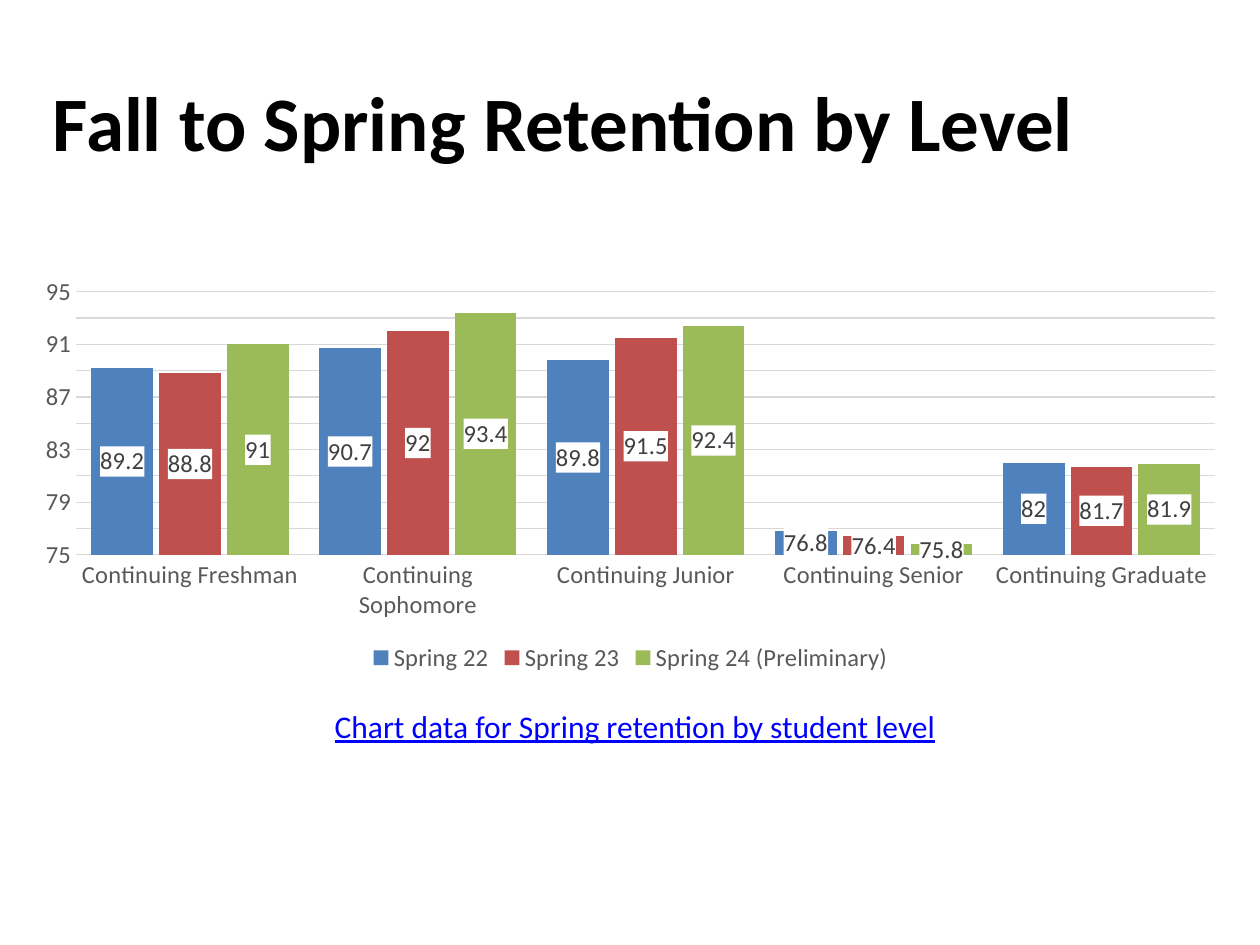
from lxml.etree import SubElement
from pptx import Presentation
from pptx.chart.data import CategoryChartData
from pptx.dml.color import RGBColor
from pptx.enum.chart import XL_CHART_TYPE, XL_LABEL_POSITION, XL_LEGEND_POSITION, XL_TICK_MARK
from pptx.enum.text import MSO_ANCHOR, PP_ALIGN
from pptx.oxml.ns import qn
from pptx.util import Inches, Pt

TITLE = "Fall to Spring Retention by Level"
DATA_CAPTION = "Chart data for Spring retention by student level"
LEVELS = ["Continuing Freshman", "Continuing Sophomore", "Continuing Junior",
          "Continuing Senior", "Continuing Graduate"]

BLACK = RGBColor(0, 0, 0)
LINK_BLUE = RGBColor(0, 0, 0xFF)
AXIS_GRAY = RGBColor(0x59, 0x59, 0x59)
LABEL_GRAY = RGBColor(0x40, 0x40, 0x40)
GRID_GRAY = RGBColor(0xD9, 0xD9, 0xD9)
WHITE = RGBColor(0xFF, 0xFF, 0xFF)
FONT = "Calibri"

TERMS = [
    ("Spring 22", (89.2, 90.7, 89.8, 76.8, 82), RGBColor(0x4F, 0x81, 0xBD)),
    ("Spring 23", (88.8, 92, 91.5, 76.4, 81.7), RGBColor(0xC0, 0x50, 0x4D)),
    ("Spring 24 (Preliminary)", (91, 93.4, 92.4, 75.8, 81.9), RGBColor(0x9B, 0xBB, 0x59)),
]


def style_font(font, size, color, bold=False, underline=False):
    font.name, font.size, font.bold = FONT, Pt(size), bold
    font.underline = underline
    font.color.rgb = color


def style_line(line, color):
    line.color.rgb = color
    line.width = Pt(0.75)


def add_text(slide, text, box, align=PP_ALIGN.LEFT, anchor=MSO_ANCHOR.TOP,
             side_inset=0.1, **font_format):
    frame = slide.shapes.add_textbox(*map(Inches, box)).text_frame
    frame.word_wrap = True
    frame.vertical_anchor = anchor
    frame.margin_left = frame.margin_right = Inches(side_inset)
    paragraph = frame.paragraphs[0]
    paragraph.alignment = align
    run = paragraph.add_run()
    run.text = text
    style_font(run.font, **font_format)


def fill_labels(labels, color):
    """Put a solid box behind the data labels."""
    properties = labels._element.makeelement(qn("c:spPr"))
    fill = SubElement(properties, qn("a:solidFill"))
    SubElement(fill, qn("a:srgbClr"), val=str(color))
    labels._element.find(qn("c:txPr")).addprevious(properties)


def add_retention_chart(slide, box):
    data = CategoryChartData()
    data.categories = LEVELS
    for term, rates, _ in TERMS:
        data.add_series(term, rates)
    chart = slide.shapes.add_chart(
        XL_CHART_TYPE.COLUMN_CLUSTERED, *map(Inches, box), data).chart
    style_font(chart.font, 14, BLACK)
    chart.has_title = False

    chart.has_legend = True
    chart.legend.position = XL_LEGEND_POSITION.BOTTOM
    chart.legend.include_in_layout = False
    style_font(chart.legend.font, 14, AXIS_GRAY)

    levels, rates = chart.category_axis, chart.value_axis
    for axis in (levels, rates):
        axis.major_tick_mark = axis.minor_tick_mark = XL_TICK_MARK.NONE
        style_font(axis.tick_labels.font, 14, AXIS_GRAY)
    style_line(levels.format.line, GRID_GRAY)
    rates.format.line.fill.background()
    rates.minimum_scale, rates.maximum_scale, rates.major_unit = 75, 95, 2
    style_line(rates.major_gridlines.format.line, GRID_GRAY)

    plot = chart.plots[0]
    plot.gap_width, plot.overlap, plot.vary_by_categories = 50, -10, False
    for series, (_, _, color) in zip(plot.series, TERMS):
        series.format.fill.solid()
        series.format.fill.fore_color.rgb = color
        series.invert_if_negative = False
        labels = series.data_labels
        labels.show_value = True
        labels.position = XL_LABEL_POSITION.CENTER
        style_font(labels.font, 14, LABEL_GRAY)
        fill_labels(labels, WHITE)


def main():
    presentation = Presentation()
    presentation.slide_width, presentation.slide_height = Inches(10), Inches(7.5)
    slide = presentation.slides.add_slide(presentation.slide_layouts[6])
    add_text(slide, TITLE, (0.42, 0.33, 9, 1.25), anchor=MSO_ANCHOR.MIDDLE,
             side_inset=0, size=44, color=BLACK, bold=True)
    add_retention_chart(slide, (0.17, 2.13, 9.67, 3.25))
    add_text(slide, DATA_CAPTION, (0.58, 5.56, 8.92, 0.4), align=PP_ALIGN.CENTER,
             size=18, color=LINK_BLUE, underline=True)
    presentation.save("out.pptx")


if __name__ == "__main__":
    main()
